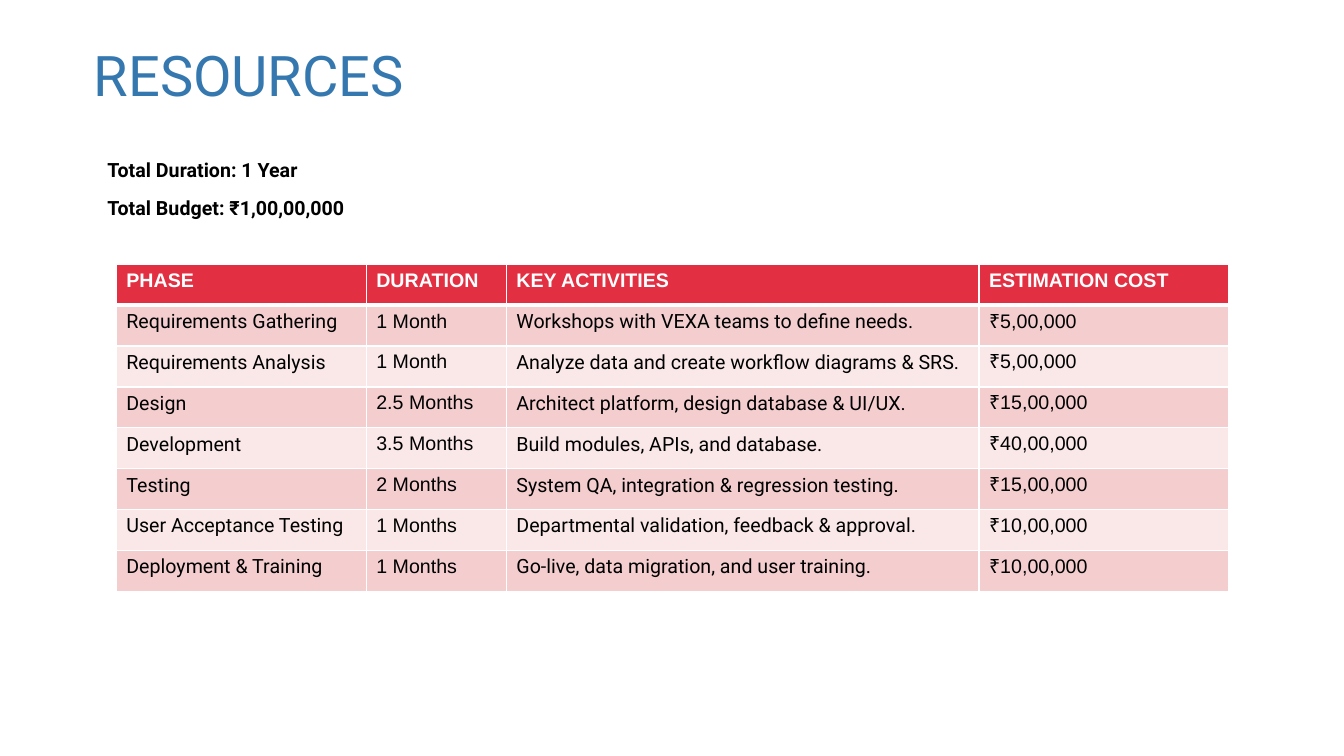
from lxml import etree
from pptx import Presentation
from pptx.dml.color import RGBColor
from pptx.enum import text
from pptx.oxml import ns
from pptx.util import Cm, Pt

BLUE = RGBColor(0x35, 0x78, 0xAF)
BLACK = RGBColor(0, 0, 0)
WHITE = RGBColor(0xFF, 0xFF, 0xFF)
RED = RGBColor(0xE2, 0x30, 0x42)
ROSE = RGBColor(0xF4, 0xCD, 0xCF)
PALE_ROSE = RGBColor(0xFA, 0xE8, 0xE9)

COLUMN_WIDTHS = [6.3, 3.53, 11.91, 6.3]
ROW_HEIGHT = 1.03
ROWS = [
    ("PHASE", "DURATION", "KEY ACTIVITIES", "ESTIMATION COST"),
    ("Requirements Gathering", "1 Month", "Workshops with VEXA teams to define needs.", "₹5,00,000"),
    ("Requirements Analysis", "1 Month", "Analyze data and create workflow diagrams & SRS.", "₹5,00,000"),
    ("Design", "2.5 Months", "Architect platform, design database & UI/UX.", "₹15,00,000"),
    ("Development", "3.5 Months", "Build modules, APIs, and database.", "₹40,00,000"),
    ("Testing", "2 Months", "System QA, integration & regression testing.", "₹15,00,000"),
    ("User Acceptance Testing", "1 Months", "Departmental validation, feedback & approval.", "₹10,00,000"),
    ("Deployment & Training", "1 Months", "Go-live, data migration, and user training.", "₹10,00,000"),
]


def style_font(font, name, size, color, bold=False):
    font.name = name
    font.size = Pt(size)
    font.color.rgb = color
    font.bold = bold


def add_border(cell, side, points):
    """Draw a white border on one side (L, R, T or B) of a cell."""
    line = etree.SubElement(cell._tc.get_or_add_tcPr(), ns.qn(f"a:ln{side}"), w=str(Pt(points)))
    fill = etree.SubElement(line, ns.qn("a:solidFill"))
    etree.SubElement(fill, ns.qn("a:srgbClr"), val=str(WHITE))


deck = Presentation()
deck.slide_width = Cm(33.87)
deck.slide_height = Cm(19.05)
page = deck.slides.add_slide(deck.slide_layouts[5])

title = page.shapes.title
title.left, title.top, title.width, title.height = Cm(2.11), Cm(1.09), Cm(19.96), Cm(3.3)
title.text_frame.text = "RESOURCES"
title.text_frame.vertical_anchor = text.MSO_ANCHOR.TOP
heading = title.text_frame.paragraphs[0]
heading.alignment = text.PP_ALIGN.LEFT
heading.line_spacing = 0.9
style_font(heading.runs[0].font, "Roboto", 40, BLUE)

summary = page.shapes.add_textbox(Cm(2.46), Cm(3.86), Cm(29.29), Cm(11.94)).text_frame
summary.word_wrap = True
summary.text = "Total Duration: 1 Year\nTotal Budget: ₹1,00,00,000"
for para in summary.paragraphs:
    style_font(para.runs[0].font, "Roboto", 14, BLACK, bold=True)
summary.paragraphs[1].space_before = Pt(10)

table = page.shapes.add_table(
    len(ROWS), len(COLUMN_WIDTHS), Cm(2.93), Cm(6.66),
    Cm(sum(COLUMN_WIDTHS)), Cm(ROW_HEIGHT * len(ROWS))).table
for column, width in zip(table.columns, COLUMN_WIDTHS):
    column.width = Cm(width)

for r, values in enumerate(ROWS):
    table.rows[r].height = Cm(ROW_HEIGHT)
    is_header = r == 0
    fill_color = RED if is_header else ROSE if r % 2 else PALE_ROSE
    for c, value in enumerate(values):
        cell = table.cell(r, c)
        cell.text = value
        font_name = "Arial" if is_header or c % 2 else "Roboto"
        style_font(cell.text_frame.paragraphs[0].runs[0].font, font_name, 14,
                   WHITE if is_header else BLACK, bold=is_header)
        for side in "LRTB":
            meets_header_rule = (r, side) in [(0, "B"), (1, "T")]
            add_border(cell, side, 3 if meets_header_rule else 1)
        cell.fill.solid()
        cell.fill.fore_color.rgb = fill_color

deck.save("out.pptx")
